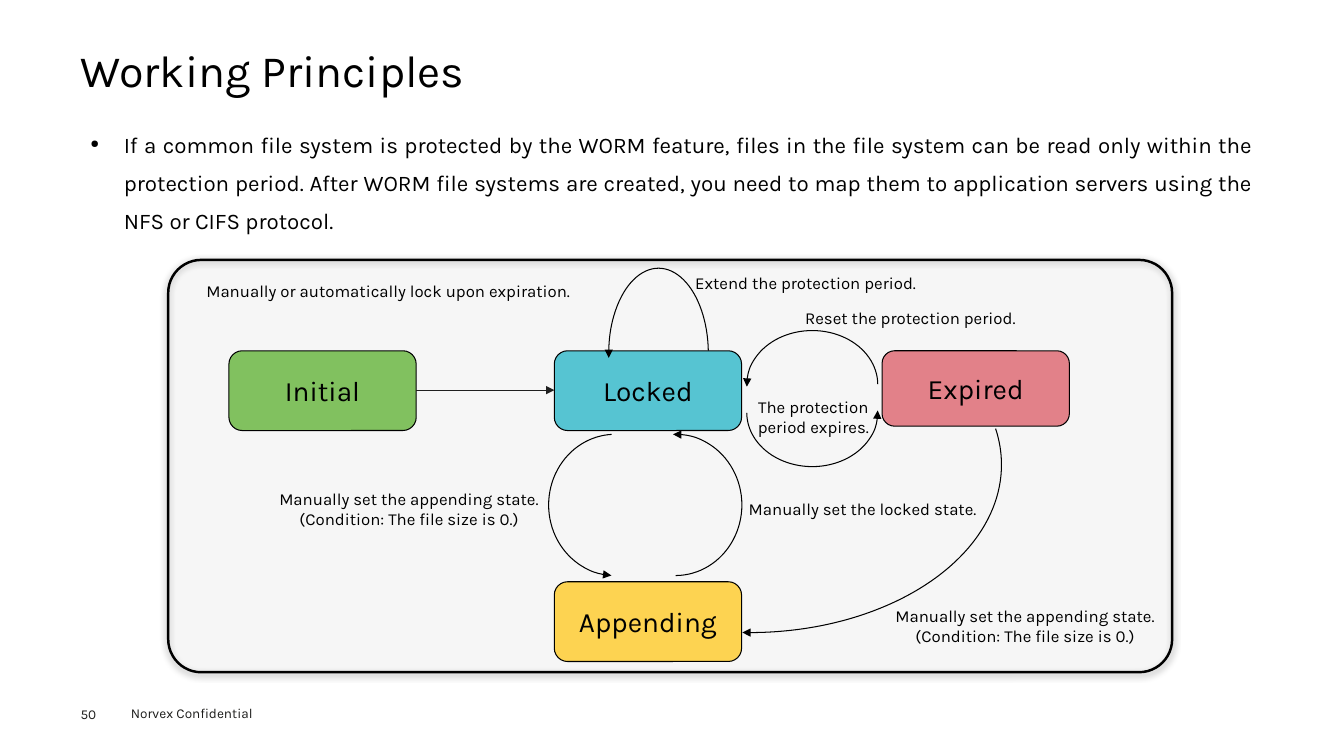
from lxml.etree import SubElement
from pptx import Presentation
from pptx.dml.color import RGBColor
from pptx.enum.shapes import MSO_CONNECTOR as Connector, MSO_SHAPE as Shape
from pptx.enum.text import MSO_ANCHOR as Anchor, PP_ALIGN as Align
from pptx.oxml.ns import qn
from pptx.util import Cm, Pt

BLACK = RGBColor(0x00, 0x00, 0x00)
CHARCOAL = RGBColor(0x1F, 0x1F, 0x1F)
FOOTER = RGBColor(0x1D, 0x1D, 0x1B)
PANEL = RGBColor(0xED, 0xED, 0xED)
GREEN = RGBColor(0x81, 0xC1, 0x5F)
TEAL = RGBColor(0x56, 0xC4, 0xD2)
RED = RGBColor(0xE2, 0x81, 0x89)
YELLOW = RGBColor(0xFD, 0xD3, 0x51)

BODY = (
    "If a common file system is protected by the WORM feature, files in the file system "
    "can be read only within the protection period. After WORM file systems are created, "
    "you need to map them to application servers using the NFS or CIFS protocol."
)
APPENDING_RULE = "Manually set the appending state.\n(Condition: The file size is 0.)"

STATE_WIDTH, STATE_HEIGHT = 4.72, 2.01
STATES = [
    ("Initial", 5.77, 8.84, STATE_HEIGHT, GREEN),
    ("Locked", 13.97, 8.84, STATE_HEIGHT, TEAL),
    ("Expired", 22.23, 8.84, 1.9, RED),
    ("Appending", 13.97, 14.66, STATE_HEIGHT, YELLOW),
]
ARCS = [
    ((15.34, 6.76, 2.51, 4.29), (183.08, 5.19), 180, True),
    ((13.72, 11.05, 3.56, 3.35), (2.8, 176.96), 270, True),
    ((15.24, 11.05, 3.56, 3.35), (180.27, 1.91), 270, True),
    ((14.66, 5.36, 8.46, 12.7), (81.66, 182.45), 270, False),
    ((18.82, 9.04, 3.3, 2.72), (180.27, 1.91), 0, True),
    ((18.82, 8.33, 3.3, 2.72), (180.27, 1.91), 180, True),
]
LABELS = [
    ("Manually or automatically lock upon expiration.", (4.95, 6.96, 10.57, 0.76), Align.LEFT, True),
    ("Extend the protection period.", (17.27, 6.76, 6.17, 0.76), Align.LEFT, False),
    ("The protection period expires.", (18.62, 9.88, 3.76, 1.27), Align.CENTER, True),
    ("Reset the protection period.", (20.04, 7.62, 5.92, 0.76), Align.LEFT, False),
    (APPENDING_RULE, (6.73, 12.19, 7.16, 1.27), Align.CENTER, False),
    ("Manually set the locked state.", (18.62, 12.45, 6.38, 0.76), Align.LEFT, False),
    (APPENDING_RULE, (22.23, 15.14, 7.21, 1.27), Align.CENTER, True),
]


class StateDiagram:
    font = "Karla"

    def __init__(self, slide):
        self.slide = slide

    def set_text(self, text_frame, text, size, color=BLACK, align=Align.LEFT):
        text_frame.text = text
        for paragraph in text_frame.paragraphs:
            paragraph.alignment = align
            for run in paragraph.runs:
                run.font.name = self.font
                run.font.size = Pt(size)
                run.font.color.rgb = color

    def text(self, text, box, size, color=BLACK, align=Align.LEFT, wrap=True, inset=True):
        shape = self.slide.shapes.add_textbox(*map(Cm, box))
        frame = shape.text_frame
        frame.word_wrap = wrap
        if not inset:
            frame.margin_left = frame.margin_right = frame.margin_top = frame.margin_bottom = 0
        self.set_text(frame, text, size, color, align)
        return frame.paragraphs[0]

    def bullet(self, text, box, size):
        paragraph = self.text(text, box, size, align=Align.JUSTIFY)
        properties = paragraph._p.get_or_add_pPr()
        properties.set("marL", str(Cm(0.84)))
        properties.set("indent", str(-Cm(0.84)))
        SubElement(properties, qn("a:buSzPct"), val="50000")
        SubElement(properties, qn("a:buChar"), char="●")
        paragraph.line_spacing = 1.4

    def shape(self, kind, box, line_width):
        shape = self.slide.shapes.add_shape(kind, *map(Cm, box))
        shape.shadow.inherit = False
        shape.line.color.rgb = BLACK
        shape.line.width = Pt(line_width)
        return shape

    def panel(self, box):
        shape = self.shape(Shape.ROUNDED_RECTANGLE, box, 1.75)
        shape.adjustments[0] = 0.08
        shape.fill.solid()
        shape.fill.fore_color.rgb = PANEL
        properties = shape.element.spPr
        fill = properties.find(qn("a:solidFill")).find(qn("a:srgbClr"))
        SubElement(fill, qn("a:alpha"), val="8000")
        shadow = SubElement(
            properties.find(qn("a:effectLst")), qn("a:outerShdw"),
            blurRad=str(Pt(5)), dist=str(Pt(1.6)), dir="5400000", rotWithShape="0",
        )
        shade = SubElement(shadow, qn("a:srgbClr"), val=str(BLACK))
        SubElement(shade, qn("a:alpha"), val="38000")

    def state(self, name, left, top, height, color):
        shape = self.shape(Shape.ROUNDED_RECTANGLE, (left, top, STATE_WIDTH, height), 0.75)
        shape.fill.solid()
        shape.fill.fore_color.rgb = color
        frame = shape.text_frame
        frame.vertical_anchor = Anchor.MIDDLE
        frame.margin_left = frame.margin_right = Cm(0.33)
        frame.margin_top = frame.margin_bottom = Cm(0.18)
        self.set_text(frame, name, 20, align=Align.CENTER)

    def arrowhead(self, shape):
        SubElement(shape.get_or_add_ln(), qn("a:tailEnd"), type="triangle")

    def arc(self, box, angles, rotation, flipped):
        shape = self.shape(Shape.ARC, box, 0.75)
        shape.fill.background()
        for index, degrees in enumerate(angles):
            shape.adjustments[index] = degrees * 0.6
        shape.rotation = rotation
        if flipped:
            shape.element.spPr.find(qn("a:xfrm")).set("flipV", "1")
        self.arrowhead(shape)

    def arrow(self, left, right, y):
        connector = self.slide.shapes.add_connector(
            Connector.STRAIGHT, Cm(left), Cm(y), Cm(right), Cm(y)
        )
        connector.line.color.rgb = CHARCOAL
        connector.line.width = Pt(0.5)
        self.arrowhead(connector)
        SubElement(connector.element.spPr, qn("a:effectLst"))


def main():
    presentation = Presentation()
    presentation.slide_width, presentation.slide_height = Cm(33.87), Cm(19.05)
    diagram = StateDiagram(presentation.slides.add_slide(presentation.slide_layouts[6]))
    diagram.text("Norvex Confidential", (3.05, 17.65, 4.06, 0.69), 9.7, FOOTER)
    diagram.text("50", (2.03, 17.78, 1.4, 0.41), 9.7, FOOTER, inset=False)
    diagram.panel((4.24, 6.55, 25.3, 10.39))
    for state in STATES:
        diagram.state(*state)
    for arc in ARCS:
        diagram.arc(*arc)
    for text, box, align, wrap in LABELS:
        diagram.text(text, box, 12, align=align, wrap=wrap)
    title = diagram.text("Working Principles", (2.03, 1.24, 29.79, 1.37), 32, inset=False)
    title.line_spacing = 0.9
    diagram.bullet(BODY, (2.03, 2.92, 29.79, 3.12), 16)
    diagram.arrow(10.49, 13.97, 9.83)
    presentation.save("out.pptx")


if __name__ == "__main__":
    main()
